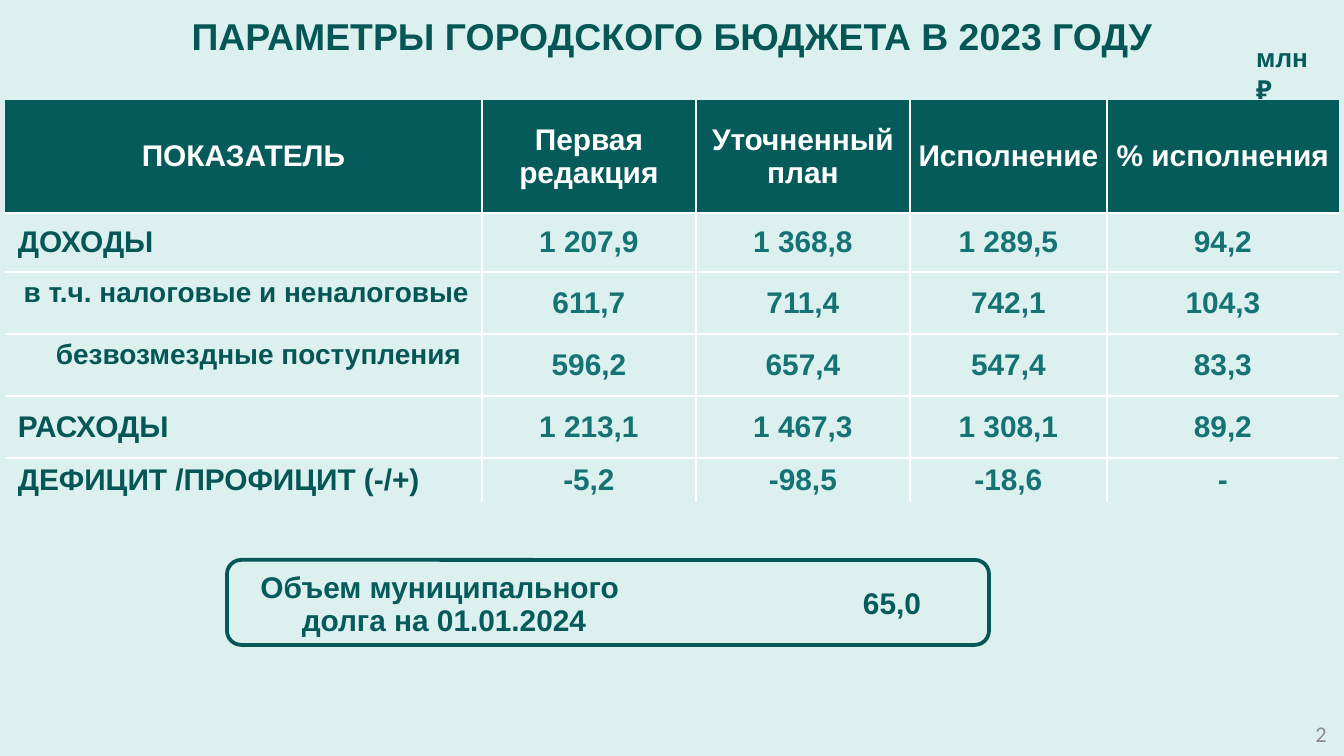
from lxml.etree import SubElement
from pptx import Presentation
from pptx.dml.color import RGBColor
from pptx.enum.shapes import MSO_SHAPE as Preset
from pptx.enum.text import MSO_ANCHOR as Anchor, PP_ALIGN as Align
from pptx.oxml import parse_xml
from pptx.oxml.ns import nsdecls, qn
from pptx.util import Pt

EMU_PER_PX = 914400 / 134.4

BACKDROP = RGBColor(0xDC, 0xF0, 0xF0)
DARK_TEAL = RGBColor(0x05, 0x57, 0x55)
HEADER_TEAL = RGBColor(0x05, 0x5A, 0x5A)
VALUE_TEAL = RGBColor(0x16, 0x73, 0x73)
WHITE = RGBColor(0xFF, 0xFF, 0xFF)
GRAY = RGBColor(0x8C, 0x8C, 0x8C)

PLAIN_TABLE_STYLE = "{2D5ABB26-0587-4C30-8999-92F81FD0307C}"
COLUMN_WIDTHS = [477, 214, 214, 197, 232]
ROW_HEIGHTS = [113, 59, 62, 62, 62, 44]
HEADINGS = ["ПОКАЗАТЕЛЬ", "Первая редакция", "Уточненный план", "Исполнение", "% исполнения"]
BUDGET = [
    ["ДОХОДЫ", "1 207,9", "1 368,8", "1 289,5", "94,2"],
    ["в т.ч. налоговые и неналоговые", "611,7", "711,4", "742,1", "104,3"],
    ["безвозмездные поступления ", "596,2", "657,4", "547,4", "83,3"],
    ["РАСХОДЫ", "1 213,1", "1 467,3", "1 308,1", "89,2"],
    ["ДЕФИЦИТ /ПРОФИЦИТ (-/+)", "-5,2", "-98,5", "-18,6", "-"],
]
SUBITEM_ROWS = (2, 3)


def px(length):
    return round(length * EMU_PER_PX)


def box(*lengths):
    return [px(length) for length in lengths]


def set_all(target, values):
    for name, value in values.items():
        setattr(target, name, value)


def write(frame, text, color, size=16, align=Align.CENTER, bold=True, font="Arial"):
    frame.text = text
    for paragraph in frame.paragraphs:
        paragraph.alignment = align
        set_all(paragraph.font, {"name": font, "size": Pt(size), "bold": bold})
        paragraph.font.color.rgb = color


def add_title(slide, text):
    title = slide.shapes.title
    set_all(title, dict(zip(("left", "top", "width", "height"), box(0, 0, 1344, 71))))
    write(title.text_frame, text, DARK_TEAL, size=20)
    title.text_frame.vertical_anchor = Anchor.MIDDLE


def add_label(slide, place, text, color, wrap=True, **style):
    frame = slide.shapes.add_textbox(*box(*place)).text_frame
    set_all(frame, {"word_wrap": wrap, "vertical_anchor": Anchor.MIDDLE})
    write(frame, text, color, **style)


def add_plain_table(slide, left, top, widths, heights):
    place = box(left, top, sum(widths), sum(heights))
    table = slide.shapes.add_table(len(heights), len(widths), *place).table
    set_all(table, {"first_row": False, "horz_banding": False})
    table._tbl.tblPr.find(qn("a:tableStyleId")).text = PLAIN_TABLE_STYLE
    for column, width in zip(table.columns, widths):
        column.width = px(width)
    for row, height in zip(table.rows, heights):
        row.height = px(height)
    return table


def fill_cell(cell, text, color, fill=None, anchor=Anchor.MIDDLE, side=13, **style):
    set_all(cell, {
        "vertical_anchor": anchor,
        "margin_left": px(side), "margin_right": px(side),
        "margin_top": px(5), "margin_bottom": px(5),
    })
    if fill is None:
        cell.fill.background()
    else:
        cell.fill.solid()
        cell.fill.fore_color.rgb = fill
    write(cell.text_frame, text, color, **style)


def rule_cell(cell, sides):
    properties = cell._tc.get_or_add_tcPr()
    for position, side in enumerate(sides):
        line = parse_xml(f'<a:ln{side} {nsdecls("a")} w="{Pt(1)}"/>')
        solid = SubElement(line, qn("a:solidFill"))
        SubElement(solid, qn("a:srgbClr"), val=str(WHITE))
        properties.insert(position, line)


def cell_style(row, column):
    if row == 0:
        return {"color": WHITE, "fill": HEADER_TEAL, "side": 0 if column else 13}
    if column:
        return {"color": VALUE_TEAL}
    if row in SUBITEM_ROWS:
        return {"color": DARK_TEAL, "size": 15, "align": Align.RIGHT, "anchor": Anchor.TOP}
    return {"color": DARK_TEAL, "align": Align.LEFT}


def add_budget_table(slide):
    table = add_plain_table(slide, 5, 100, COLUMN_WIDTHS, ROW_HEIGHTS)
    last_row, last_column = len(ROW_HEIGHTS) - 1, len(COLUMN_WIDTHS) - 1
    for row, texts in enumerate([HEADINGS] + BUDGET):
        for column, text in enumerate(texts):
            cell = table.cell(row, column)
            fill_cell(cell, text, **cell_style(row, column))
            inner = {"L": column > 0, "R": column < last_column,
                     "T": row > 0, "B": row < last_row}
            rule_cell(cell, [side for side, shown in inner.items() if shown])


def add_debt(slide):
    table = add_plain_table(slide, 220, 558, [448, 448], [93])
    texts = ["Объем муниципального \nдолга на 01.01.2024", "65,0"]
    for column, text in enumerate(texts):
        fill_cell(table.cell(0, column), text, HEADER_TEAL)
    frame = slide.shapes.add_shape(Preset.ROUNDED_RECTANGLE, *box(227, 560, 762, 85))
    frame.shadow.inherit = False
    frame.fill.background()
    frame.line.color.rgb = DARK_TEAL
    frame.line.width = Pt(2)


def main():
    deck = Presentation()
    set_all(deck, {"slide_width": px(1344), "slide_height": px(756)})
    slide = deck.slides.add_slide(deck.slide_layouts[5])
    slide.background.fill.solid()
    slide.background.fill.fore_color.rgb = BACKDROP
    add_title(slide, "ПАРАМЕТРЫ ГОРОДСКОГО БЮДЖЕТА В 2023 ГОДУ")
    add_budget_table(slide)
    add_debt(slide)
    add_label(slide, (1027, 714, 313, 40), "2", GRAY,
              size=12, align=Align.RIGHT, bold=False, font="Calibri")
    add_label(slide, (1243, 50, 101, 46), "млн ₽", HEADER_TEAL,
              wrap=False, size=14, align=Align.LEFT)
    deck.save("out.pptx")


if __name__ == "__main__":
    main()
